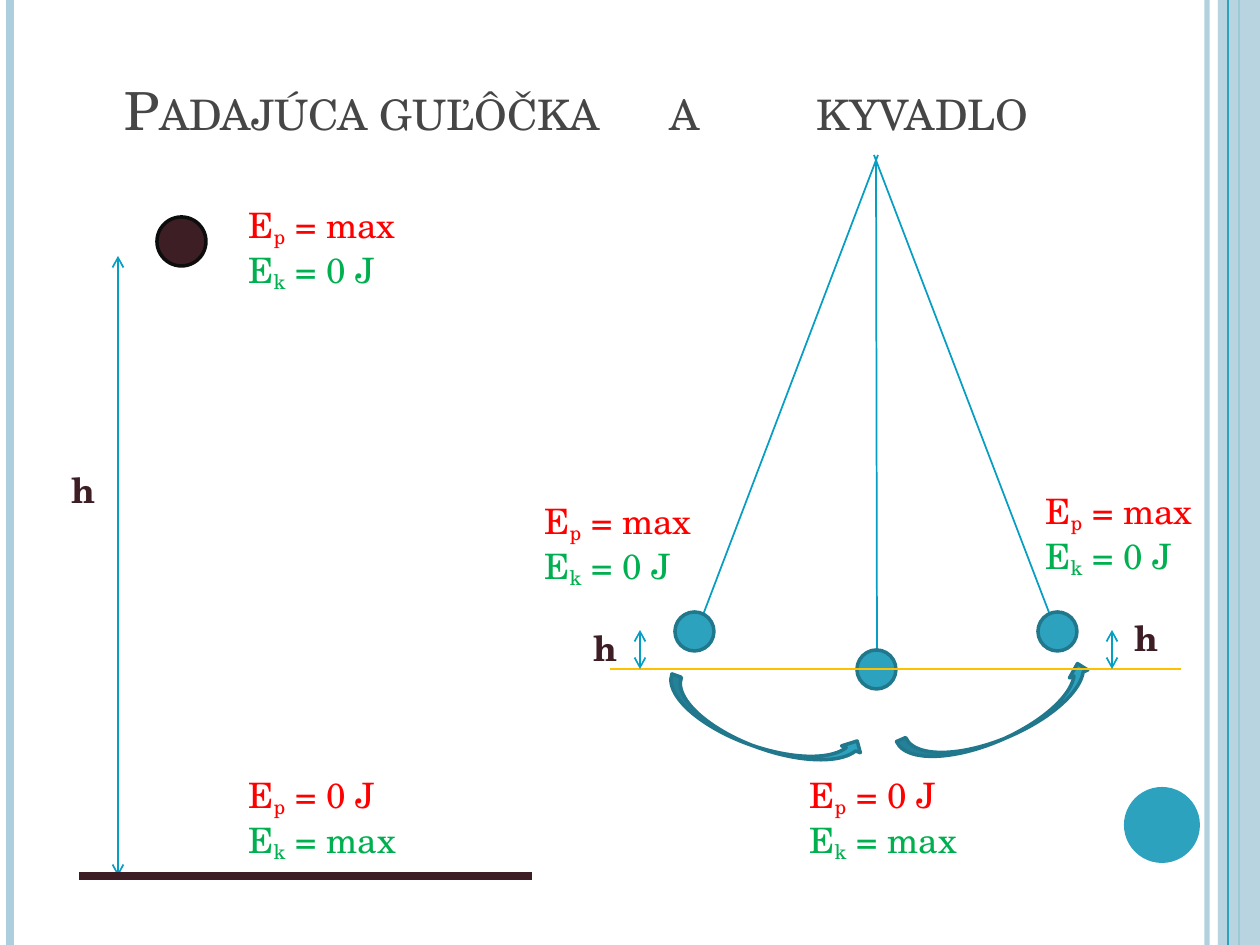
from lxml.etree import SubElement
from pptx import Presentation
from pptx.dml.color import RGBColor
from pptx.enum.shapes import MSO_CONNECTOR, MSO_SHAPE
from pptx.enum.text import MSO_ANCHOR
from pptx.oxml.ns import qn
from pptx.util import Pt

PX = 914400 / 126
FONT = "TeX Gyre Schola"
PALE = RGBColor(0xAD, 0xCE, 0xDC)
TEAL = RGBColor(0x2D, 0xA2, 0xBF)
DEEP = RGBColor(0x21, 0x78, 0x8D)
CYAN = RGBColor(0x07, 0x9E, 0xC3)
WINE = RGBColor(0x3E, 0x1E, 0x25)
BLACK = RGBColor(0x0D, 0x0D, 0x0D)
GRAY = RGBColor(0x46, 0x46, 0x46)
RED = RGBColor(0xFF, 0x00, 0x00)
GREEN = RGBColor(0x00, 0xB0, 0x50)
GOLD = RGBColor(0xFF, 0xC0, 0x00)

deck = Presentation()
deck.slide_width, deck.slide_height = round(1260 * PX), round(945 * PX)
slide = deck.slides.add_slide(deck.slide_layouts[6])
shapes = slide.shapes


def add_line(x1, y1, x2, y2, color, width, heads=False):
    ends = [round(n * PX) for n in (x1, y1, x2, y2)]
    line = shapes.add_connector(MSO_CONNECTOR.STRAIGHT, *ends)
    line.line.color.rgb = color
    line.line.width = Pt(width)
    props = line._element.spPr
    if heads:
        for tag in ("a:headEnd", "a:tailEnd"):
            SubElement(props.find(qn("a:ln")), qn(tag), type="arrow")
    SubElement(props, qn("a:effectLst"))
    return line


def add_shape(kind, x, y, w, h, fill, edge=None, turn=0):
    shape = shapes.add_shape(kind, *[round(n * PX) for n in (x, y, w, h)])
    shape.shadow.inherit = False
    shape.fill.solid()
    shape.fill.fore_color.rgb = fill
    if edge is None:
        shape.line.fill.background()
    else:
        shape.line.color.rgb = edge
        shape.line.width = Pt(2)
    shape.rotation = turn
    return shape


# Side rails
thin = add_line(1207, 0, 1207, 945, PALE, 3)
add_line(10, 0, 10, 945, PALE, 4.5)
add_line(1239, 0, 1239, 945, TEAL, 1.5)
band = add_shape(MSO_SHAPE.RECTANGLE, 1218, 0, 42, 945, PALE)
add_line(1228, 0, 1228, 945, TEAL, 0.75)
add_shape(MSO_SHAPE.OVAL, 1124, 787, 76, 76, TEAL)
for part, alpha in ((thin, 93), (band, 87)):
    color = next(part._element.iter(qn("a:srgbClr")))
    SubElement(color, qn("a:alpha"), val=str(alpha * 1000))

# Title, spaced by tab stops
title = shapes.add_textbox(*[round(n * PX) for n in (112, 38, 980, 109)])
frame = title.text_frame
frame.word_wrap = True
frame.vertical_anchor = MSO_ANCHOR.BOTTOM
para = frame.paragraphs[0]
tabs = SubElement(para._p.get_or_add_pPr(), qn("a:tabLst"))
for stop in (545, 692):
    SubElement(tabs, qn("a:tab"), pos=str(round(stop * PX)), algn="l")
run = para.add_run()
run.text = "Padajúca guľôčka\ta\tkyvadlo"
run.font.name, run.font.size = FONT, Pt(30)
run.font.color.rgb = GRAY
run.font._element.set("cap", "small")

# Falling ball
add_shape(MSO_SHAPE.OVAL, 157, 217, 49, 49, WINE, BLACK)
add_line(118, 256, 118, 876, CYAN, 1, heads=True)
add_line(79, 876, 532, 876, WINE, 4.5)

# Pendulum: string top, string end, ball corner
for top, end, ball in (
    ((876, 157), (877, 650), (857, 650)),
    ((878, 155), (703, 615), (675, 612)),
    ((874, 155), (1050, 615), (1038, 612)),
):
    add_line(*top, *end, CYAN, 1)
    add_shape(MSO_SHAPE.OVAL, *ball, 39, 39, TEAL, DEEP)

# Swing arrows and lowest level
for x, y, turn in ((896, 699, 336.7), (659, 708, 19.9)):
    add_shape(MSO_SHAPE.CURVED_UP_ARROW, x, y, 207, 40, TEAL, DEEP, turn)
add_line(610, 669, 1181, 669, GOLD, 1)
for x in (640, 1112):
    add_line(x, 630, x, 669, CYAN, 1, heads=True)

# Labels: each line is a colour with its letter, subscript and value
high = [(RED, "E", "p", " = max"), (GREEN, "E", "k", " = 0 J")]
low = [(RED, "E", "p", " = 0 J"), (GREEN, "E", "k", " = max")]
mark = [(WINE, "h", "", "")]
for x, y, rows in (
    (59, 462, mark), (581, 620, mark), (1122, 610, mark),
    (236, 197, high), (532, 493, high), (1033, 483, high),
    (236, 767, low), (797, 767, low),
):
    w, h = (49, 55) if rows is mark else (256, 97)
    box = shapes.add_textbox(*[round(n * PX) for n in (x, y, w, h)])
    frame = box.text_frame
    frame.word_wrap = True
    for i, (color, *words) in enumerate(rows):
        para = frame.add_paragraph() if i else frame.paragraphs[0]
        for j, word in enumerate(words):
            if not word:
                continue
            run = para.add_run()
            run.text = word
            run.font.name, run.font.size = FONT, Pt(20)
            run.font.bold = rows is mark
            run.font.color.rgb = color
            if j == 1:
                run.font._element.set("baseline", "-18000")

deck.save("out.pptx")
